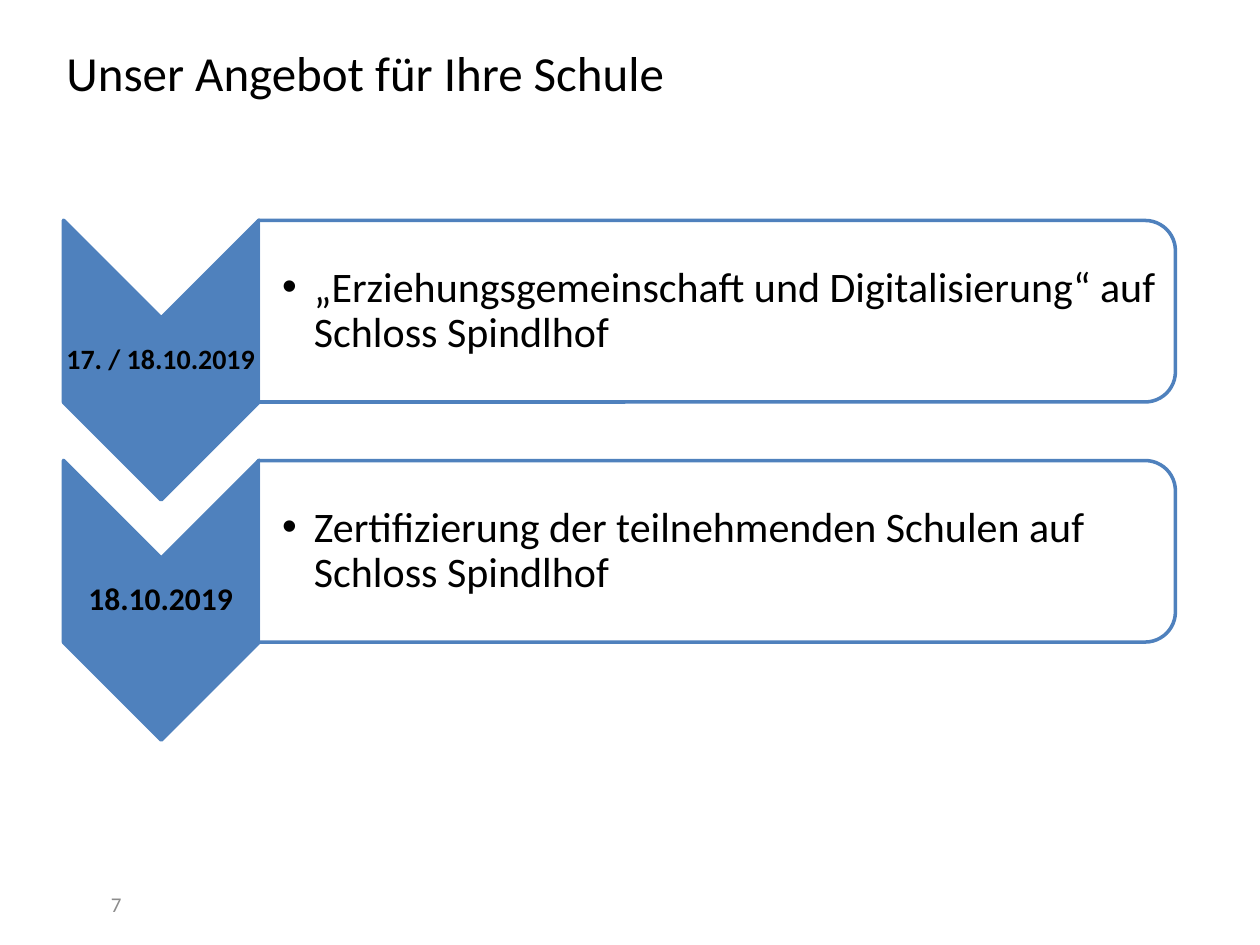
from lxml import etree
from pptx import Presentation
from pptx.dml.color import RGBColor
from pptx.enum.shapes import MSO_SHAPE
from pptx.enum.text import MSO_ANCHOR, PP_ALIGN
from pptx.oxml.ns import qn
from pptx.util import Cm, Pt

CHEVRON, ROUND_TOP = MSO_SHAPE.CHEVRON, MSO_SHAPE.ROUND_2_SAME_RECTANGLE
MIDDLE = MSO_ANCHOR.MIDDLE
LEFT, CENTER, RIGHT = PP_ALIGN.LEFT, PP_ALIGN.CENTER, PP_ALIGN.RIGHT

COLORS = {"text": "000000", "accent": "4F81BD", "panel": "FFFFFF", "number": "8C8C8C"}
FONT = "Calibri"
ROW_STEP = 4.84
ROWS = [
    ("17. / 18.10.2019", 16,
     "„Erziehungsgemeinschaft und Digitalisierung“ auf Schloss Spindlhof"),
    ("18.10.2019", 18,
     "Zertifizierung der teilnehmenden Schulen auf Schloss Spindlhof"),
]


class SlideBuilder:
    def __init__(self, slide):
        self.slide = slide

    def color(self, name):
        return RGBColor.from_string(COLORS[name])

    def fill_text(self, tf, text, size, color="text", bold=False, align=LEFT,
                  insets=(0.25, 0.13, 0.25, 0.13), spacing=None, bullet=False):
        tf.word_wrap = True
        tf.vertical_anchor = MIDDLE
        (tf.margin_left, tf.margin_top,
         tf.margin_right, tf.margin_bottom) = map(Cm, insets)
        p = tf.paragraphs[0]
        p.alignment = align
        if spacing:
            p.line_spacing = spacing
        if bullet:
            pPr = p._p.get_or_add_pPr()
            pPr.set("marL", str(Cm(0.64)))
            pPr.set("indent", str(-Cm(0.64)))
            etree.SubElement(pPr, qn("a:buFont")).set("typeface", "Arial")
            etree.SubElement(pPr, qn("a:buChar")).set("char", "•")
        r = p.add_run()
        r.text = text
        r.font.name, r.font.size, r.font.bold = FONT, Pt(size), bold
        r.font.color.rgb = self.color(color)

    def title(self, text, box, size):
        sp = self.slide.shapes.title
        sp.left, sp.top, sp.width, sp.height = map(Cm, box)
        self.fill_text(sp.text_frame, text, size)

    def text(self, text, box, size, **style):
        sp = self.slide.shapes.add_textbox(*map(Cm, box))
        self.fill_text(sp.text_frame, text, size, **style)

    def turned_shape(self, kind, box, fill, opacity=100):
        sp = self.slide.shapes.add_shape(kind, *map(Cm, box))
        sp.rotation = 90
        sp.shadow.inherit = False
        sp.fill.solid()
        sp.fill.fore_color.rgb = self.color(fill)
        if opacity < 100:
            clr = sp.fill._xPr.find(qn("a:solidFill"))[0]
            etree.SubElement(clr, qn("a:alpha")).set("val", str(opacity * 1000))
        sp.line.color.rgb = self.color("accent")
        sp.line.width = Pt(2)


def main():
    prs = Presentation()
    prs.slide_width, prs.slide_height = Cm(25.4), Cm(19.05)
    s = SlideBuilder(prs.slides.add_slide(prs.slide_layouts[5]))

    # Title
    s.title("Unser Angebot für Ihre Schule", (1.09, 0.74, 21.03, 1.4), 28)

    # One row per date: chevron with date, panel with description
    for i, (date, date_size, description) in enumerate(ROWS):
        dy = i * ROW_STEP
        s.turned_shape(CHEVRON, (0.43, 5.29 + dy, 5.64, 3.94), "accent")
        s.text(date, (1.27, 6.42 + dy, 3.94, 1.7), date_size, bold=True,
               align=CENTER, insets=(0.03,) * 4, spacing=0.9)
        s.turned_shape(ROUND_TOP, (12.62, -2.97 + dy, 3.66, 18.49), "panel", 90)
        s.text(description, (5.21, 4.63 + dy, 18.31, 3.3), 24,
               insets=(0.48, 0.05, 0.05, 0.05), spacing=0.9, bullet=True)

    # Slide number
    s.text("7", (1.3, 17.73, 1.4, 0.99), 12, color="number", align=RIGHT)

    prs.save("out.pptx")


if __name__ == "__main__":
    main()
